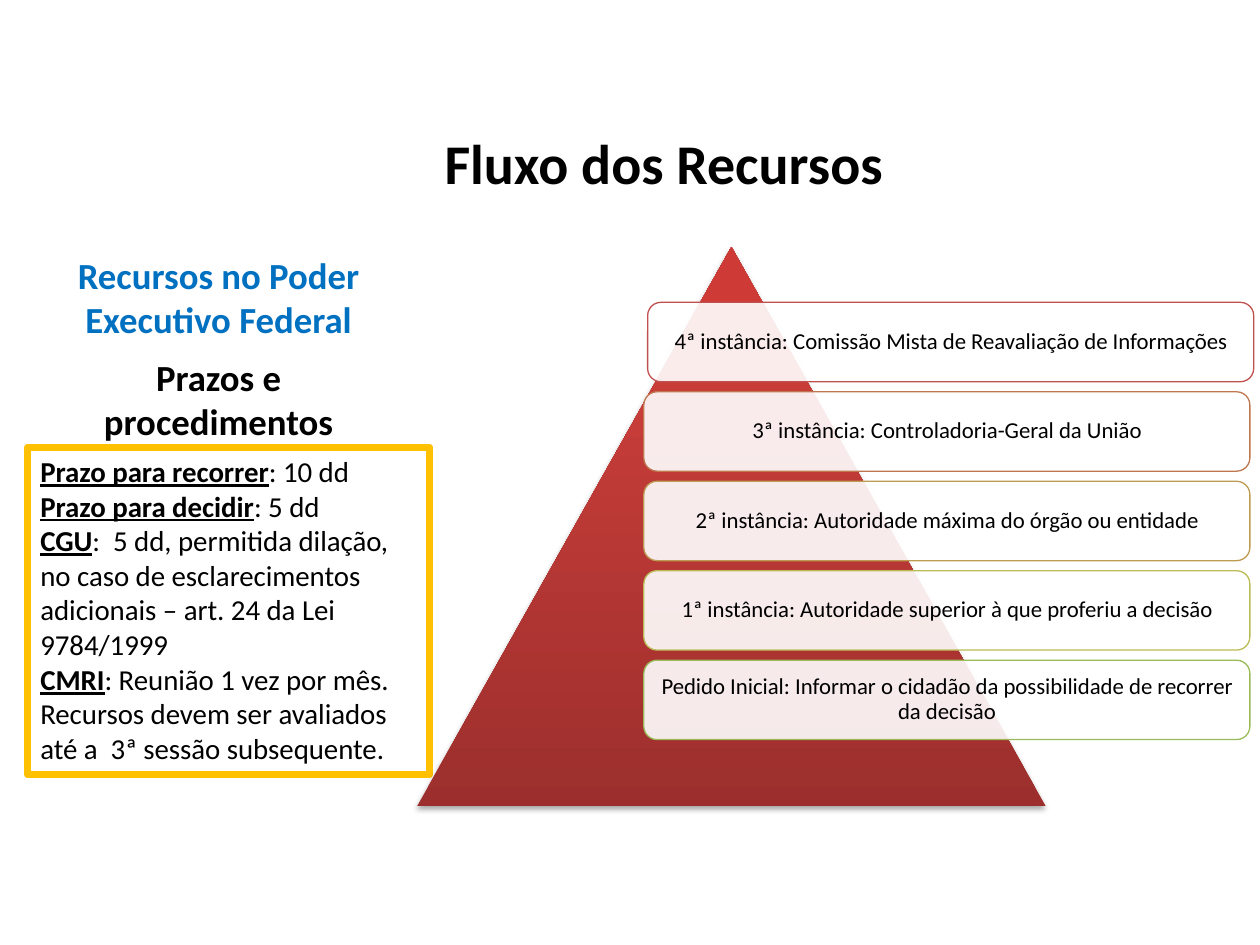
from copy import deepcopy

from lxml.etree import SubElement
from pptx import Presentation
from pptx.dml.color import RGBColor
from pptx.enum.shapes import MSO_SHAPE as Shape
from pptx.enum.text import MSO_ANCHOR as Anchor, MSO_AUTO_SIZE as AutoSize, PP_ALIGN as Align
from pptx.oxml.ns import qn
from pptx.util import Inches, Pt

INSTANCES = [
    ("4ª instância: Comissão Mista de Reavaliação de Informações", "C0504D", 5.14),
    ("3ª instância: Controladoria-Geral da União", "BF7750", 5.11),
    ("2ª instância: Autoridade máxima do órgão ou entidade", "BD9B53", 5.11),
    ("1ª instância: Autoridade superior à que proferiu a decisão", "BCBC56", 5.11),
    ("Pedido Inicial: Informar o cidadão da possibilidade de recorrer da decisão", "9BBB59", 5.11),
]
DEADLINES = [
    ("Prazo para recorrer", ": 10 dd"),
    ("Prazo para decidir", ": 5 dd"),
    ("CGU", ":  5 dd, permitida dilação, no caso de esclarecimentos adicionais – art. 24 da Lei 9784/1999"),
    ("CMRI", ": Reunião 1 vez por mês."),
    ("", "Recursos devem ser avaliados"),
    ("", "até a  3ª sessão subsequente."),
]
PYRAMID_STOPS = [(0, "9C2F2D"), (80, "CB3E3A"), (100, "CE3B37")]


def color(value):
    return RGBColor.from_string(value)


def place(box, left, top, width, height):
    box.left, box.top = Inches(left), Inches(top)
    box.width, box.height = Inches(width), Inches(height)


def add_span(para, text, size, fill="000000", bold=False, underline=False):
    span = para.add_run()
    span.text = text
    span.font.name = "Calibri"
    span.font.size = Pt(size)
    span.font.bold = bold
    span.font.underline = underline
    span.font.color.rgb = color(fill)


def set_frame(box, anchor=Anchor.TOP, auto_size=AutoSize.NONE):
    frame = box.text_frame
    frame.word_wrap = True
    frame.vertical_anchor = anchor
    frame.auto_size = auto_size
    return frame


def add_title(page):
    box = page.shapes.title
    place(box, 1.61, 1.02, 7.32, 0.6)
    para = set_frame(box, auto_size=AutoSize.SHAPE_TO_FIT_TEXT).paragraphs[0]
    para.alignment = Align.CENTER
    para.line_spacing = 0.93
    add_span(para, "Fluxo dos Recursos", 32, bold=True)


def add_headings(page):
    box = page.shapes.add_textbox(Inches(0.3), Inches(1.96), Inches(2.87), Inches(1.63))
    frame = set_frame(box, auto_size=AutoSize.SHAPE_TO_FIT_TEXT)
    first, second = frame.paragraphs[0], frame.add_paragraph()
    first.alignment = second.alignment = Align.CENTER
    second.space_before = Pt(7.5)
    add_span(first, "Recursos no Poder Executivo Federal", 21, fill="0070C0", bold=True)
    add_span(second, "Prazos e procedimentos", 21, bold=True)


def add_deadlines(page):
    box = page.placeholders[1]
    place(box, 0.22, 3.55, 3.19, 2.6)
    box.line.color.rgb = color("FFC000")
    box.line.width = Pt(4)
    frame = set_frame(box)
    for index, (term, detail) in enumerate(DEADLINES):
        para = frame.add_paragraph() if index else frame.paragraphs[0]
        para.space_before = Pt(0)
        properties = para._p.get_or_add_pPr()
        properties.set("marL", "0")
        properties.set("indent", "0")
        SubElement(properties, qn("a:buNone"))
        if term:
            add_span(para, term, 16.5, bold=True, underline=True)
        add_span(para, detail, 16.5)


def add_pyramid(page):
    pyramid = page.shapes.add_shape(
        Shape.ISOSCELES_TRIANGLE, Inches(3.31), Inches(1.96), Inches(4.99), Inches(4.44))
    pyramid.line.fill.background()
    fill = pyramid.fill
    fill.gradient()
    fill.gradient_angle = 90
    properties = pyramid._element.spPr
    stop_list = properties.find(".//" + qn("a:gsLst"))
    stop_list.append(deepcopy(stop_list[-1]))
    for stop, (position, value) in zip(fill.gradient_stops, PYRAMID_STOPS):
        stop.position = position / 100
        stop.color.rgb = color(value)
    pyramid.shadow.inherit = False
    shadow = SubElement(
        properties.find(qn("a:effectLst")), qn("a:outerShdw"), blurRad=str(Pt(3.1)),
        dist=str(Pt(1.8)), dir="5400000", rotWithShape="0")
    black = SubElement(shadow, qn("a:srgbClr"), val="000000")
    SubElement(black, qn("a:alpha"), val="35000")


def add_instance(page, text, outline, left, top):
    box = page.shapes.add_shape(
        Shape.ROUNDED_RECTANGLE, Inches(left), Inches(top), Inches(4.81), Inches(0.63))
    box.shadow.inherit = False
    box.fill.solid()
    box.fill.fore_color.rgb = color("FFFFFF")
    white = box._element.spPr.find(qn("a:solidFill"))[0]
    SubElement(white, qn("a:alpha"), val="90000")
    box.line.color.rgb = color(outline)
    box.line.width = Pt(0.75)
    frame = set_frame(box, anchor=Anchor.MIDDLE)
    frame.margin_left = frame.margin_right = Inches(0.05)
    frame.margin_top = frame.margin_bottom = Inches(0.05)
    para = frame.paragraphs[0]
    para.alignment = Align.CENTER
    para.line_spacing = 0.9
    add_span(para, text, 13)


def main():
    deck = Presentation()
    deck.slide_width, deck.slide_height = Inches(10), Inches(7.5)
    page = deck.slides.add_slide(deck.slide_layouts[1])
    add_title(page)
    add_headings(page)
    add_deadlines(page)
    add_pyramid(page)
    for row, (text, outline, left) in enumerate(INSTANCES):
        add_instance(page, text, outline, left, 2.4 + 0.71 * row)
    deck.save("out.pptx")


if __name__ == "__main__":
    main()
